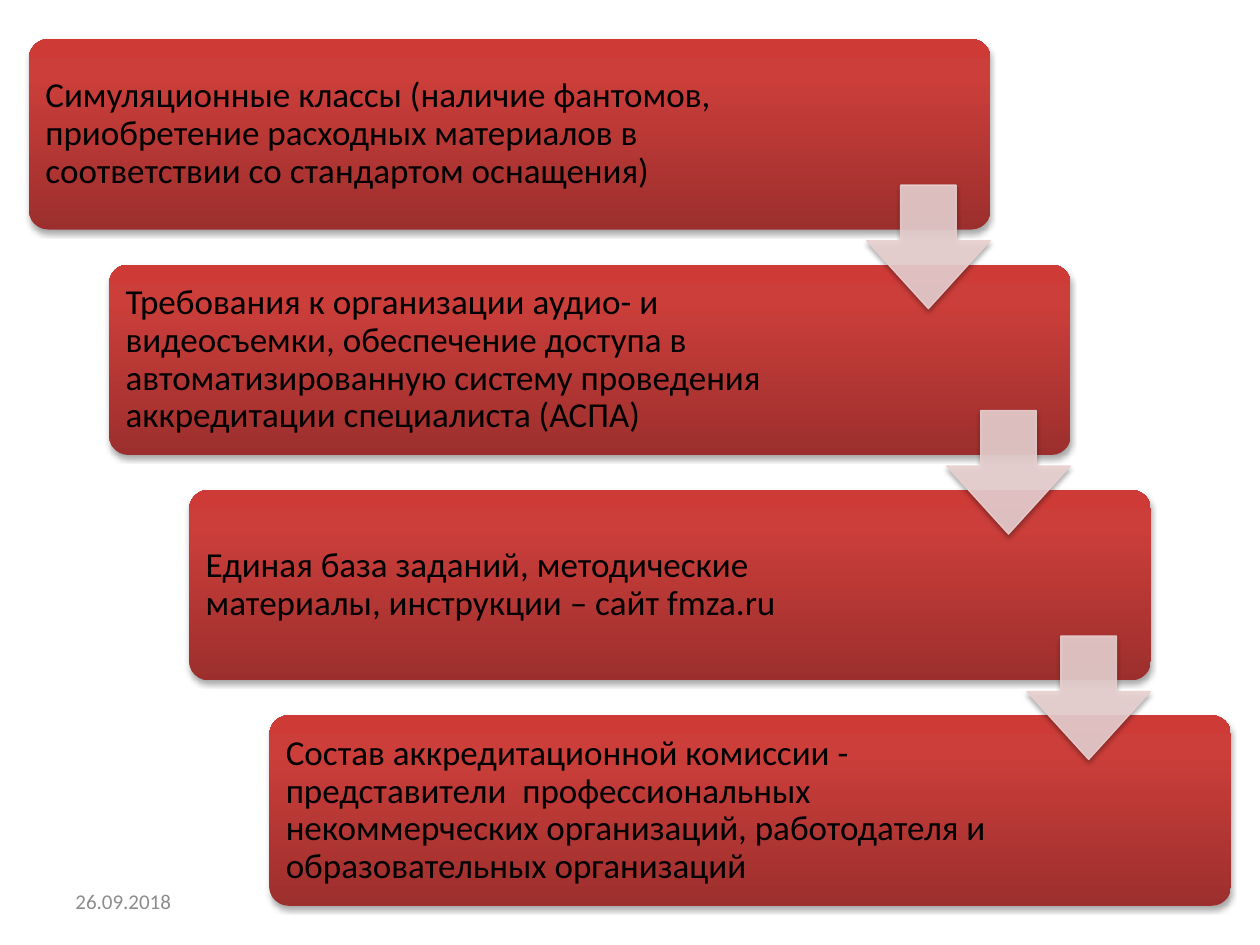
from copy import deepcopy

from lxml import etree
from pptx import Presentation
from pptx.dml.color import RGBColor
from pptx.enum.shapes import MSO_SHAPE
from pptx.enum.text import MSO_ANCHOR
from pptx.oxml.ns import qn
from pptx.util import Pt

ROUNDED = MSO_SHAPE.ROUNDED_RECTANGLE
DOWN_ARROW = MSO_SHAPE.DOWN_ARROW
MIDDLE = MSO_ANCHOR.MIDDLE

COLOURS = {
    "dark_red": "9C2F2D",
    "red": "CB3E3A",
    "bright_red": "CE3B37",
    "arrow": "E8D0D0",
    "text": "000000",
    "date": "8C8C8C",
    "shadow": "000000",
}
CARD_GRADIENT = [(0, "dark_red"), (0.8, "red"), (1, "bright_red")]

STEPS = [
    "Симуляционные классы (наличие фантомов, приобретение расходных материалов "
    "в соответствии со стандартом оснащения)",
    "Требования к организации аудио- и видеосъемки, обеспечение доступа в "
    "автоматизированную систему проведения аккредитации специалиста (АСПА)",
    "Единая база заданий, методические материалы, инструкции – сайт fmza.ru",
    "Состав аккредитационной комиссии - представители  профессиональных "
    "некоммерческих организаций, работодателя и образовательных организаций",
]

CARD_LEFT, CARD_TOP, CARD_WIDTH, CARD_HEIGHT = 16.6, 22.4, 549.4, 108.8
STEP_RIGHT, STEP_DOWN = 45.8, 128.8
TEXT_INSET, TEXT_WIDTH = 3.3, 425
ARROW_LEFT, ARROW_TOP, ARROW_SIZE = 495.2, 105.8, 70.6


def colour(name):
    return RGBColor.from_string(COLOURS[name])


def set_alpha(fill_parent, percent):
    """Make the solid colour directly under the given element translucent."""
    rgb = fill_parent.find(f"{qn('a:solidFill')}/{qn('a:srgbClr')}")
    etree.SubElement(rgb, qn("a:alpha"), val=str(percent * 1000))


def write(frame, text, size, colour_name, line_spacing=None):
    para = frame.paragraphs[0]
    if line_spacing:
        para.line_spacing = line_spacing
    span = para.add_run()
    span.text = text
    span.font.name = "Calibri"
    span.font.size = Pt(size)
    span.font.color.rgb = colour(colour_name)


class Page:
    """Holds the slide being built and the style of its elements."""

    def __init__(self, deck):
        self.shapes = deck.slides.add_slide(deck.slide_layouts[6]).shapes

    def shape(self, kind, left, top, width, height, adjustments):
        shape = self.shapes.add_shape(
            kind, Pt(left), Pt(top), Pt(width), Pt(height))
        for index, value in enumerate(adjustments):
            shape.adjustments[index] = value
        return shape

    def add_shadow(self, shape):
        shape.shadow.inherit = False
        effects = shape._element.spPr.find(qn("a:effectLst"))
        shadow = etree.SubElement(
            effects, qn("a:outerShdw"), blurRad=str(Pt(3.1)),
            dist=str(Pt(1.8)), dir="5400000", rotWithShape="0")
        rgb = etree.SubElement(shadow, qn("a:srgbClr"), val=COLOURS["shadow"])
        etree.SubElement(rgb, qn("a:alpha"), val="35000")

    def card(self, left, top):
        card = self.shape(ROUNDED, left, top, CARD_WIDTH, CARD_HEIGHT, [0.1])
        card.fill.gradient()
        card.fill.gradient_angle = 90
        stop_list = card._element.spPr.find(f".//{qn('a:gsLst')}")
        stop_list.append(deepcopy(stop_list[-1]))
        for stop, (position, name) in zip(card.fill.gradient_stops, CARD_GRADIENT):
            stop.position = position
            stop.color.rgb = colour(name)
        card.line.fill.background()
        self.add_shadow(card)

    def arrow(self, left, top):
        arrow = self.shape(
            DOWN_ARROW, left, top, ARROW_SIZE, ARROW_SIZE, [0.45, 0.55])
        arrow.fill.solid()
        arrow.fill.fore_color.rgb = colour("arrow")
        arrow.line.color.rgb = colour("arrow")
        arrow.line.width = Pt(0.75)
        properties = arrow._element.spPr
        set_alpha(properties, 90)
        set_alpha(properties.find(qn("a:ln")), 90)
        self.add_shadow(arrow)

    def text(self, left, top, width, height, text, inset=None, **text_format):
        box = self.shapes.add_textbox(Pt(left), Pt(top), Pt(width), Pt(height))
        frame = box.text_frame
        frame.word_wrap = True
        frame.vertical_anchor = MIDDLE
        if inset is not None:
            frame.margin_left = frame.margin_right = Pt(inset)
            frame.margin_top = frame.margin_bottom = Pt(inset)
        write(frame, text, **text_format)


def main():
    deck = Presentation()
    deck.slide_width, deck.slide_height = Pt(720), Pt(540)
    page = Page(deck)

    page.text(36, 500.5, 168, 28.8, "26.09.2018", size=12, colour_name="date")
    for index, step in enumerate(STEPS):
        left = CARD_LEFT + index * STEP_RIGHT
        top = CARD_TOP + index * STEP_DOWN
        page.card(left, top)
        page.text(left + TEXT_INSET, top + TEXT_INSET, TEXT_WIDTH,
                  CARD_HEIGHT - 2 * TEXT_INSET, step, inset=6,
                  size=20, colour_name="text", line_spacing=0.9)
    for index in range(len(STEPS) - 1):
        page.arrow(ARROW_LEFT + index * STEP_RIGHT, ARROW_TOP + index * STEP_DOWN)

    deck.save("out.pptx")


if __name__ == "__main__":
    main()
